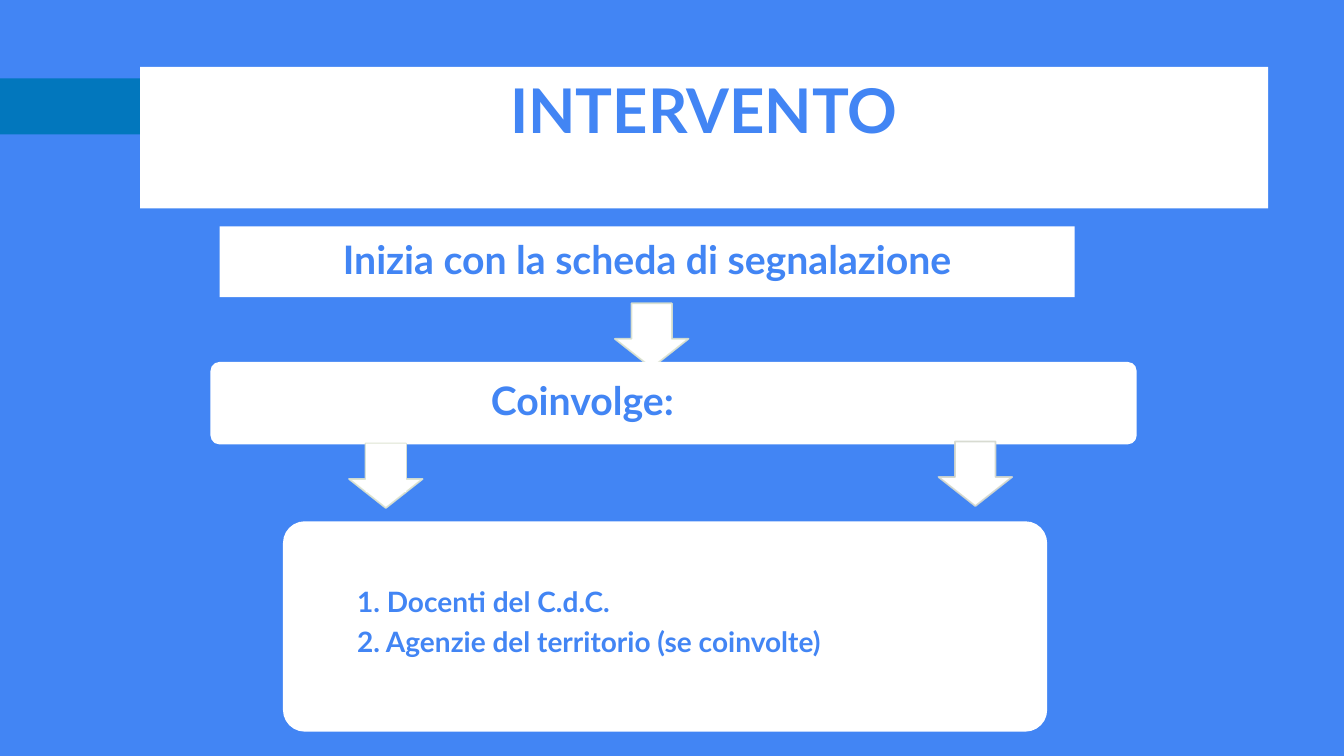
from lxml.etree import SubElement
from pptx import Presentation
from pptx.dml.color import RGBColor
from pptx.enum.shapes import MSO_SHAPE
from pptx.enum.text import MSO_ANCHOR, PP_ALIGN
from pptx.oxml.ns import qn
from pptx.util import Pt

COLORS = {
    "blue": "4285F4",
    "tab": "0277BD",
    "white": "FFFFFF",
    "sage": "DBE2CE",
    "gray": "D4D8CD",
}


class SlideBuilder:
    font = "Lato"
    border = 1.25

    def __init__(self, prs):
        self.s = prs.slides.add_slide(prs.slide_layouts[6])

    def color(self, name):
        return RGBColor.from_string(COLORS[name])

    def background(self, name):
        fill = self.s.background.fill
        fill.solid()
        fill.fore_color.rgb = self.color(name)

    def paint(self, sp, fill, line=None):
        sp.shadow.inherit = False
        sp.fill.solid()
        sp.fill.fore_color.rgb = self.color(fill)
        if line:
            sp.line.color.rgb = self.color(line)
            sp.line.width = Pt(self.border)
        else:
            sp.line.fill.background()

    def shape(self, kind, box, line=None, adjustments=()):
        sp = self.s.shapes.add_shape(kind, *map(Pt, box))
        for i, value in enumerate(adjustments):
            sp.adjustments[i] = value
        self.paint(sp, "white", line)
        return sp

    def outline(self, points, fill):
        builder = self.s.shapes.build_freeform(*points[0], scale=Pt(1))
        builder.add_line_segments(points[1:])
        self.paint(builder.convert_to_shape(), fill)

    def rounded(self, box):
        self.shape(MSO_SHAPE.ROUNDED_RECTANGLE, box, "white", [0.1])

    def arrow(self, left, top, line):
        sp = self.shape(MSO_SHAPE.DOWN_ARROW, (left, top, 52.6, 46.1),
                        line, [0.55, 0.45])
        rgb = sp.line._ln.find(".//" + qn("a:srgbClr"))
        SubElement(rgb, qn("a:alpha")).set("val", "90000")

    def text(self, box, lines, size, insets, align=PP_ALIGN.LEFT,
             anchor=MSO_ANCHOR.MIDDLE, spacing=0.9, gap=0):
        """White rectangle with bold blue lines; insets are left, top, right, bottom."""
        tf = self.shape(MSO_SHAPE.RECTANGLE, box).text_frame
        tf.word_wrap = True
        tf.vertical_anchor = anchor
        (tf.margin_left, tf.margin_top,
         tf.margin_right, tf.margin_bottom) = map(Pt, insets)
        tf.text = "\n".join(lines)
        for i, p in enumerate(tf.paragraphs):
            p.alignment = align
            p.line_spacing = spacing
            p.space_before = Pt(gap if i else 0)
            for r in p.runs:
                r.font.name = self.font
                r.font.size = Pt(size)
                r.font.bold = True
                r.font.color.rgb = self.color("blue")


def main():
    prs = Presentation()
    prs.slide_width, prs.slide_height = Pt(960), Pt(540)
    b = SlideBuilder(prs)
    b.background("blue")

    b.outline([(0, 56.2), (105, 56.2), (107, 57), (125, 75), (125, 77.5),
               (107, 95.5), (105, 96.3), (0, 95.8)], "tab")
    b.text((100.1, 47.7, 805.7, 101.2), ["INTERVENTO"], 44, (7.2, 3.6, 7.2, 3.6),
           PP_ALIGN.CENTER, MSO_ANCHOR.TOP, spacing=1.0)

    b.arrow(439.2, 216.7, "sage")
    b.text((156.9, 161.8, 610.7, 50.4), ["Inizia con la scheda di segnalazione"],
           28, [8.4] * 4, PP_ALIGN.CENTER)

    b.rounded((151, 259.2, 660.3, 57.6))
    b.text((152.6, 260.6, 554.4, 54), ["Coinvolge:"], 28, (198, 6.7, 6.7, 6.7))

    b.rounded((202.8, 373, 544.6, 149))
    b.text((249.1, 373, 413.3, 144.7),
           ["1. Docenti del C.d.C.", "2. Agenzie del territorio (se coinvolte)"],
           20, [6] * 4, gap=7)

    b.arrow(670.4, 315.4, "gray")
    b.arrow(249.3, 316.8, "sage")
    b.shape(MSO_SHAPE.RECTANGLE, (261.4, 316.8, 28.8, 34.6))

    prs.save("out.pptx")


if __name__ == "__main__":
    main()
